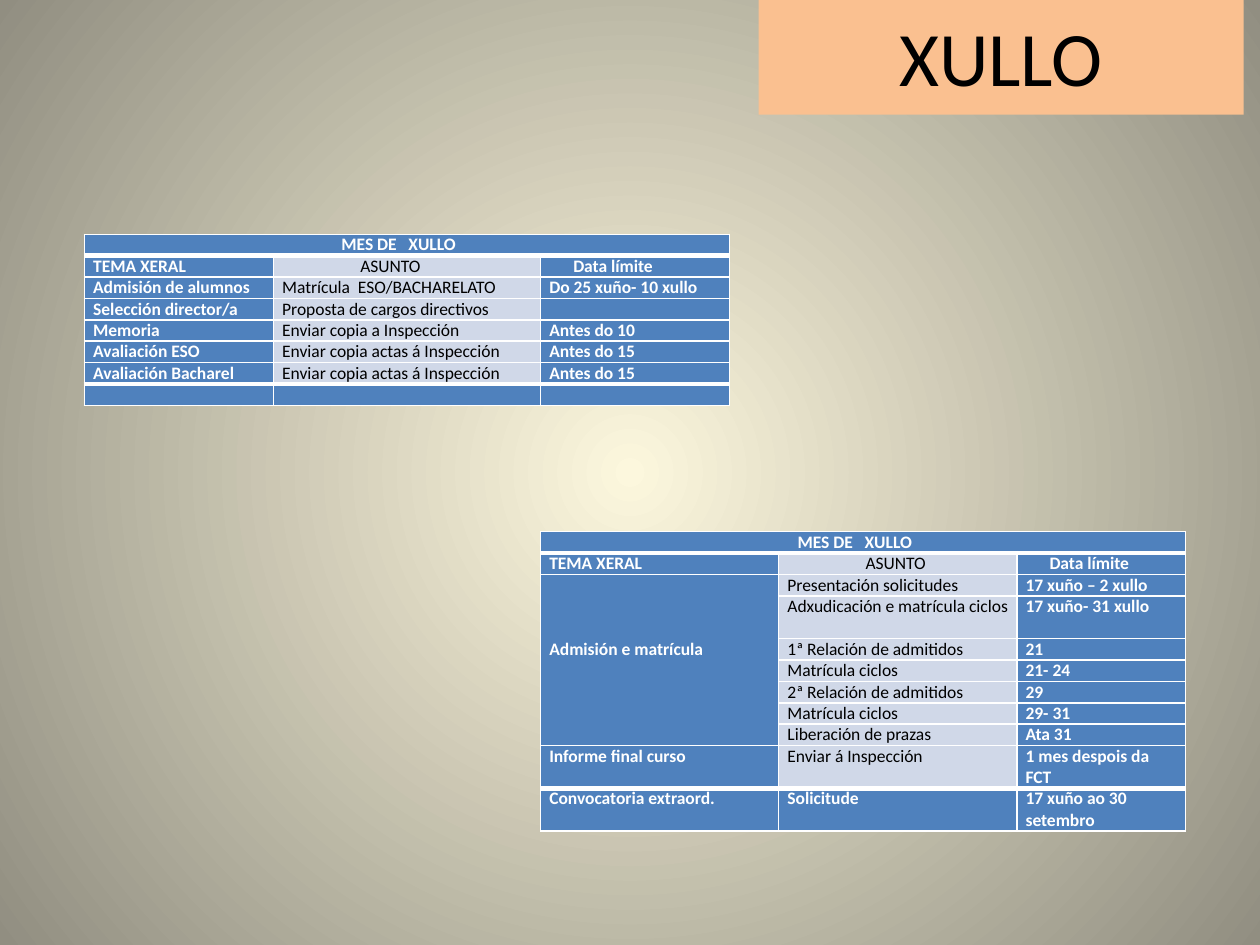
from lxml import etree
from pptx import Presentation
from pptx.dml.color import RGBColor
from pptx.enum.text import MSO_ANCHOR, PP_ALIGN
from pptx.oxml.ns import qn
from pptx.util import Inches, Pt

CENTER = PP_ALIGN.CENTER
TOP, MIDDLE = MSO_ANCHOR.TOP, MSO_ANCHOR.MIDDLE
TITLE_ONLY = 5
UNIT = 0.1  # inches per grid column and row
LINE = 1.7  # grid rows taken by one line of table text


def rgb(value):
    return RGBColor.from_string(value)


def grid(n):
    return Inches(n * UNIT)


class Deck:
    FONT = "Calibri"
    BLUE, PALE, PEACH = "4F81BD", "D0D8E8", "FAC090"
    WHITE, BLACK = "FFFFFF", "000000"
    # Left indent of each heading, in grid columns
    INDENTS = {"MES DE   XULLO": 19.7, "ASUNTO": 6.2, "Data límite": 1.9}

    def __init__(self, cols, rows):
        self.prs = Presentation()
        self.prs.slide_width, self.prs.slide_height = grid(cols), grid(rows)
        self.s = None

    def add_slide(self, inner, outer):
        self.s = self.prs.slides.add_slide(self.prs.slide_layouts[TITLE_ONLY])
        fill = self.s.background.fill
        fill.gradient()
        for stop, color in zip(fill.gradient_stops, (inner, outer)):
            stop.color.rgb = rgb(color)
        # Radial gradient from the centre
        grad = next(self.s._element.iter(qn("a:gradFill")))
        grad.remove(grad.find(qn("a:lin")))
        radial = etree.SubElement(grad, qn("a:path"), {"path": "circle"})
        etree.SubElement(radial, qn("a:fillToRect"), {k: "50000" for k in "ltrb"})

    def add_text(self, p, text, size, color, bold=False):
        r = p.add_run()
        r.text = text
        fmt = {"name": self.FONT, "size": Pt(size), "bold": bold}
        for key, value in fmt.items():
            setattr(r.font, key, value)
        r.font.color.rgb = rgb(color)

    def title(self, text, x, y, w, h):
        sp = self.s.shapes.title
        box = {"left": x, "top": y, "width": w, "height": h}
        for key, value in box.items():
            setattr(sp, key, grid(value))
        sp.fill.solid()
        sp.fill.fore_color.rgb = rgb(self.PEACH)
        tf = sp.text_frame
        tf.vertical_anchor = MIDDLE
        tf.paragraphs[0].alignment = CENTER
        self.add_text(tf.paragraphs[0], text, 44, self.BLACK)

    def border(self, cell, side, width):
        ln = etree.SubElement(cell._tc.get_or_add_tcPr(), qn("a:ln" + side),
                              {"w": str(Pt(width))})
        fill = etree.SubElement(ln, qn("a:solidFill"))
        etree.SubElement(fill, qn("a:srgbClr"), {"val": self.WHITE})

    def cell(self, cell, text, pale, thick):
        fmt = {"margin_left": grid(0.7), "margin_right": grid(0.7),
               "margin_top": 0, "margin_bottom": 0, "vertical_anchor": TOP}
        if cell.is_merge_origin and cell.span_height > 1:
            # Centred, then lifted by half a line
            fmt.update(vertical_anchor=MIDDLE, margin_bottom=grid(LINE))
        for key, value in fmt.items():
            setattr(cell, key, value)
        for side in "LRTB":
            self.border(cell, side, 3 if side in thick else 1)
        cell.fill.solid()
        cell.fill.fore_color.rgb = rgb(self.PALE if pale else self.BLUE)
        p = cell.text_frame.paragraphs[0]
        if text:
            if text in self.INDENTS:
                indent = grid(self.INDENTS[text])
                p._p.get_or_add_pPr().set("marL", str(indent))
            self.add_text(p, text, 10, self.BLACK if pale else self.WHITE, not pale)
        else:
            etree.SubElement(p._p, qn("a:endParaRPr"), {"sz": "1000"})

    def table(self, x, y, widths, rows, two_line=(), merges=()):
        """Rows hold three texts; merges hold (top, left, bottom, right)."""
        last = len(rows) - 1
        heights = [LINE * (2 if i in two_line else 1) for i in range(len(rows))]
        tbl = self.s.shapes.add_table(len(rows), len(widths), grid(x), grid(y),
                                      grid(sum(widths)), grid(sum(heights))).table
        for col, width in zip(tbl.columns, widths):
            col.width = grid(width)
        for row, height in zip(tbl.rows, heights):
            row.height = grid(height)
        for top, left, bottom, right in merges:
            tbl.cell(top, left).merge(tbl.cell(bottom, right))
        # Thick rules below the first row and above the last one
        thick = {0: "B", 1: "T", last - 1: "B", last: "T"}
        for i, row in enumerate(rows):
            for j, text in enumerate(row):
                pale = j == 1 and 0 < i < last
                self.cell(tbl.cell(i, j), text, pale, thick.get(i, ""))


HEAD = [("MES DE   XULLO", "", ""), ("TEMA XERAL", "ASUNTO", "Data límite")]
HEAD_MERGE = (0, 0, 0, 2)

GENERAL = HEAD + [
    ("Admisión de alumnos", "Matrícula  ESO/BACHARELATO", "Do 25 xuño- 10 xullo"),
    ("Selección director/a", "Proposta de cargos directivos", ""),
    ("Memoria", "Enviar copia a Inspección", "Antes do 10"),
    ("Avaliación ESO", "Enviar copia actas á Inspección", "Antes do 15"),
    ("Avaliación Bacharel", "Enviar copia actas á Inspección", "Antes do 15"),
    ("", "", ""),
]

CICLOS = HEAD + [
    ("Admisión e matrícula", "Presentación solicitudes", "17 xuño – 2 xullo"),
    ("", "Adxudicación e matrícula ciclos", "17 xuño- 31 xullo"),
    ("", "1ª Relación de admitidos", "21"),
    ("", "Matrícula ciclos", "21- 24"),
    ("", "2ª Relación de admitidos", "29"),
    ("", "Matrícula ciclos", "29- 31"),
    ("", "Liberación de prazas", "Ata 31"),
    ("Informe final curso", "Enviar á Inspección", "1 mes despois da FCT"),
    ("Convocatoria extraord.", "Solicitude", "17 xuño ao 30 setembro"),
]


def main():
    deck = Deck(100, 75)
    deck.add_slide("FCF7DD", "918E81")
    deck.title("XULLO", 60.2, -0.3, 38.5, 9.4)
    # General calendar
    deck.table(6.7, 18.6, (15, 21.2, 15), GENERAL, merges=[HEAD_MERGE])
    # Calendar of the training cycles
    deck.table(42.9, 42.2, (18.9, 18.9, 13.4), CICLOS, two_line=(3, 9, 10),
               merges=[HEAD_MERGE, (2, 0, 8, 0)])
    deck.prs.save("out.pptx")


if __name__ == "__main__":
    main()
